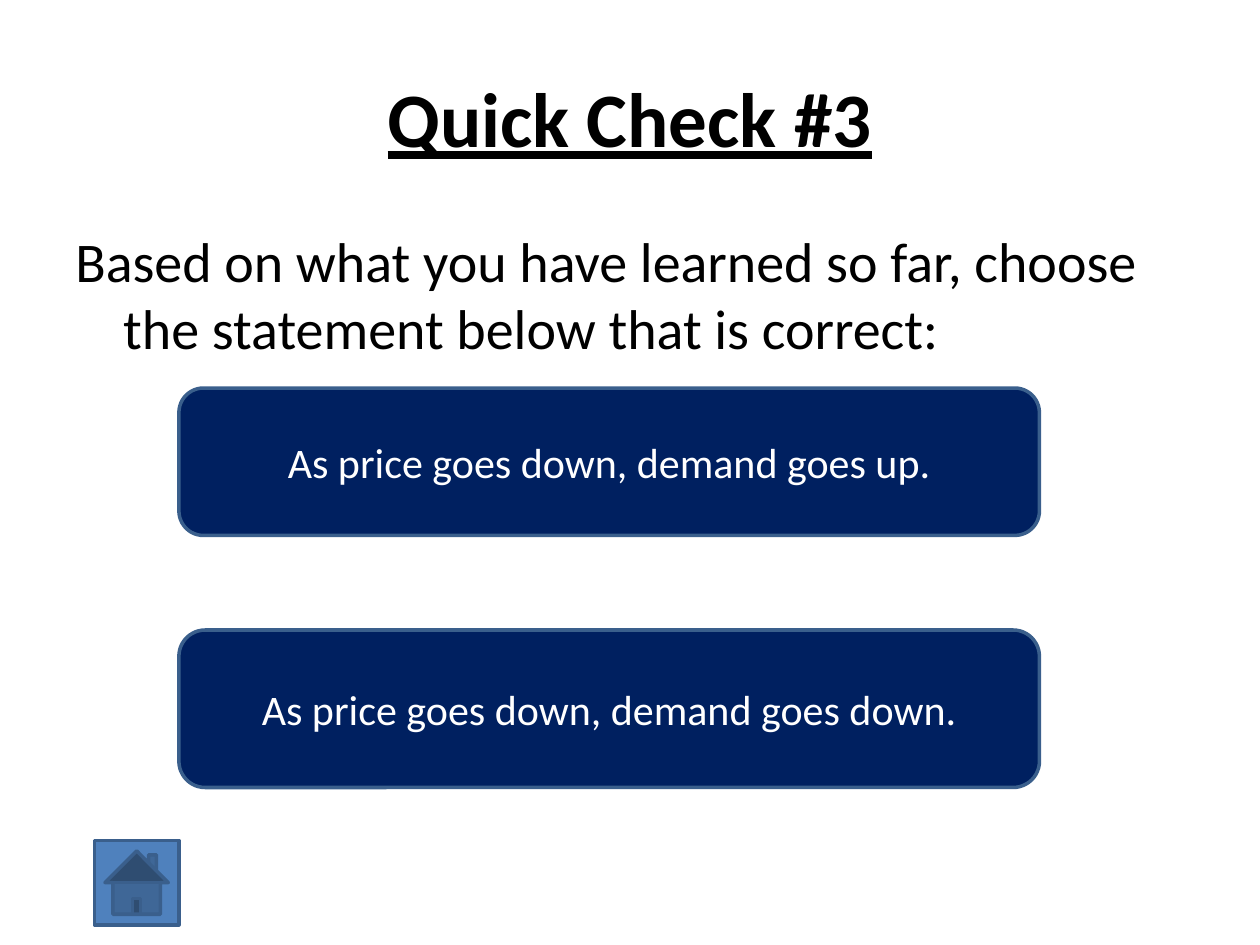
from pptx import Presentation
from pptx.dml.color import RGBColor
from pptx.enum.shapes import MSO_SHAPE
from pptx.enum.text import MSO_ANCHOR, PP_ALIGN
from pptx.util import Inches, Pt

ROUND = MSO_SHAPE.ROUNDED_RECTANGLE
HOME = MSO_SHAPE.ACTION_BUTTON_HOME
MIDDLE, TOP = MSO_ANCHOR.MIDDLE, MSO_ANCHOR.TOP
CENTER, LEFT = PP_ALIGN.CENTER, PP_ALIGN.LEFT

BLACK = RGBColor(0x00, 0x00, 0x00)
WHITE = RGBColor(0xFF, 0xFF, 0xFF)
NAVY = RGBColor(0x00, 0x20, 0x60)
BLUE = RGBColor(0x4F, 0x81, 0xBD)
EDGE = RGBColor(0x3A, 0x5F, 0x8C)


class Quiz:
    font = "Calibri"
    edge = Pt(2)

    def __init__(self, slide):
        self.slide = slide

    def label(self, shape, words, color, anchor, align, **form):
        frame = shape.text_frame
        frame.word_wrap = True
        frame.vertical_anchor = anchor
        para = frame.paragraphs[0]
        para.alignment = align
        run = para.add_run()
        run.text = words
        for name, value in {"name": self.font, **form}.items():
            setattr(run.font, name, value)
        run.font.color.rgb = color
        return para

    def text(self, box, words, anchor, align, **form):
        shape = self.slide.shapes.add_textbox(*map(Inches, box))
        return self.label(shape, words, BLACK, anchor, align, **form)

    def button(self, kind, box, fill):
        shape = self.slide.shapes.add_shape(kind, *map(Inches, box))
        shape.shadow.inherit = False
        shape.fill.solid()
        shape.fill.fore_color.rgb = fill
        shape.line.color.rgb = EDGE
        shape.line.width = self.edge
        return shape

    def answer(self, box, words):
        shape = self.button(ROUND, box, NAVY)
        self.label(shape, words, WHITE, MIDDLE, CENTER, size=Pt(24))


def main():
    deck = Presentation()
    deck.slide_width, deck.slide_height = Inches(10), Inches(7.5)
    quiz = Quiz(deck.slides.add_slide(deck.slide_layouts[6]))

    # Title
    quiz.text((0.5, 0.3, 9, 1.25), "Quick Check #3", MIDDLE, CENTER,
              size=Pt(44), bold=True, underline=True)

    # Question with a hanging indent
    para = quiz.text(
        (0.5, 1.75, 9, 4.95),
        "Based on what you have learned so far, choose "
        "the statement below that is correct:",
        TOP, LEFT, size=Pt(32))
    props = para._p.get_or_add_pPr()
    props.set("marL", str(Inches(0.38)))
    props.set("indent", str(-Inches(0.38)))

    # Answers
    for top, height, end in ((3.08, 1.17, "up"), (5, 1.25, "down")):
        quiz.answer((1.42, top, 6.83, height),
                    f"As price goes down, demand goes {end}.")

    # Home button
    quiz.button(HOME, (0.75, 6.67, 0.67, 0.67), BLUE)

    deck.save("out.pptx")


if __name__ == "__main__":
    main()
